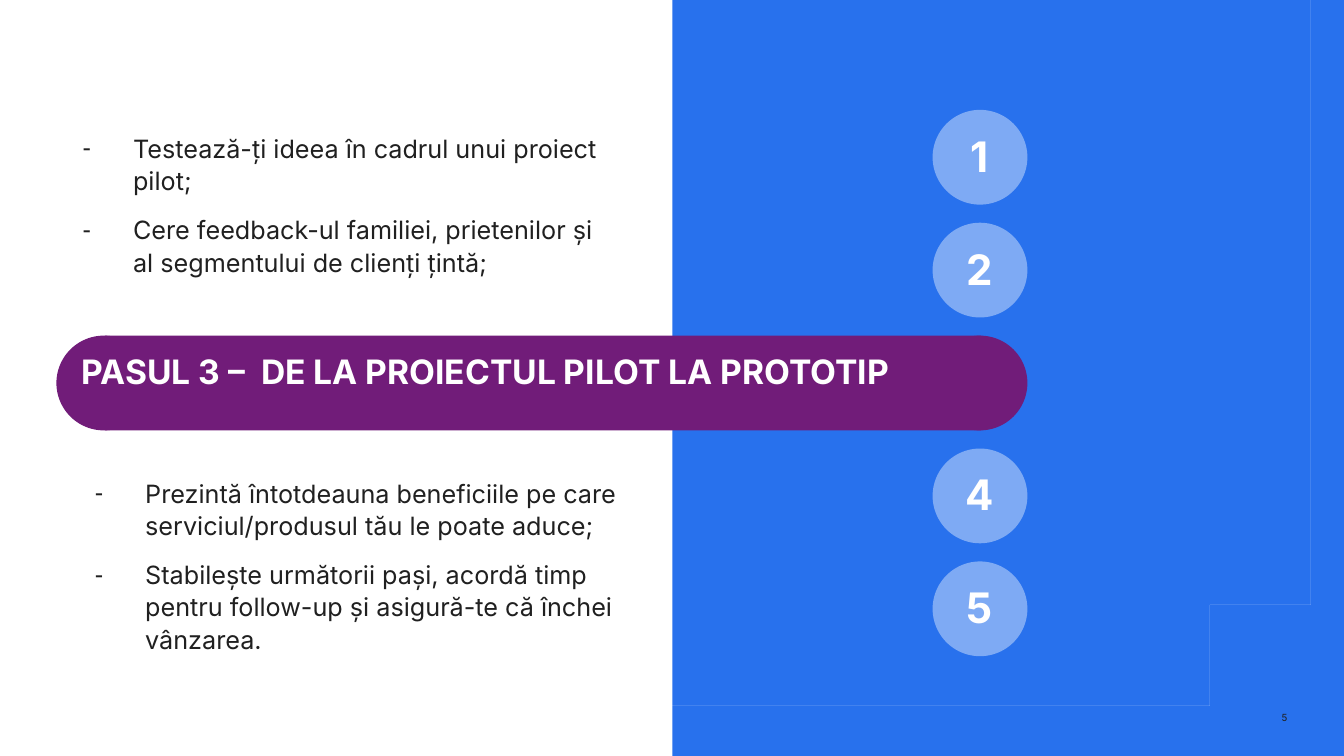
from dataclasses import dataclass
from math import cos, pi, sin

from lxml.etree import SubElement
from pptx import Presentation
from pptx.dml.color import RGBColor
from pptx.enum.shapes import MSO_SHAPE as Preset
from pptx.enum.text import MSO_ANCHOR as Anchor, MSO_AUTO_SIZE as AutoSize, PP_ALIGN as Align
from pptx.oxml.ns import qn
from pptx.util import Inches, Pt

BLUE = RGBColor(0x28, 0x71, 0xED)
PALE_BLUE = RGBColor(0x7E, 0xAA, 0xF4)
PURPLE = RGBColor(0x71, 0x1C, 0x79)
WHITE = RGBColor(0xFF, 0xFF, 0xFF)
DARK = RGBColor(0x20, 0x20, 0x20)

STEP_LEFT, STEP_TOP, STEP_PITCH, STEP_SIZE = 9.25, 1.09, 1.12, 0.94
CURRENT_STEP = 3
BEND_X, BEND_Y, BEND_RADIUS, FRAME_WIDTH = 11.44, 5.5, 1.33, 0.04


@dataclass(frozen=True)
class Box:
    left: float
    top: float
    width: float
    height: float


@dataclass(frozen=True)
class TextStyle:
    size: float
    color: RGBColor
    bold: bool = False
    align: Align = Align.LEFT
    line_spacing: float = 1.0
    space_after: float = 0
    bullet: str = ""


@dataclass(frozen=True)
class BulletList:
    placeholder: int
    box: Box
    items: tuple[str, ...]


NUMBER = TextStyle(30, WHITE, True, Align.CENTER, 0.92)
HEADING = TextStyle(24, WHITE, True, line_spacing=0.92)
BULLETS = TextStyle(18, DARK, line_spacing=1.07, space_after=12, bullet="-")
PAGE_NUMBER = TextStyle(7, DARK, align=Align.RIGHT)

LISTS = (
    BulletList(1, Box(0.82, 1.3, 5.25, 1.32), (
        "Testează-ți ideea în cadrul unui proiect pilot;",
        "Cere feedback-ul familiei, prietenilor și al segmentului de clienți țintă;",
    )),
    BulletList(2, Box(0.94, 4.72, 5.25, 2.93), (
        "Prezintă întotdeauna beneficiile pe care serviciul/produsul tău le poate aduce;",
        "Stabilește următorii pași, acordă timp pentru follow-up și asigură-te că închei vânzarea.",
    )),
)


def set_all(target, values: dict) -> None:
    for name, value in values.items():
        setattr(target, name, value)


def paint(shape, color: RGBColor) -> None:
    shape.shadow.inherit = False
    shape.fill.solid()
    shape.fill.fore_color.rgb = color
    shape.line.fill.background()


def add_preset(shapes, preset: Preset, box: Box, color: RGBColor) -> None:
    shape = shapes.add_shape(preset, Inches(box.left), Inches(box.top),
                             Inches(box.width), Inches(box.height))
    paint(shape, color)


def add_bullet(paragraph, character: str) -> None:
    properties = paragraph._p.get_or_add_pPr()
    properties.set("marL", str(Inches(0.5)))
    properties.set("indent", str(-Inches(0.5)))
    SubElement(properties, qn("a:buChar")).set("char", character)


def write_text(shape, box: Box, lines: tuple[str, ...], style: TextStyle) -> None:
    set_all(shape, {name: Inches(getattr(box, name))
                    for name in ("left", "top", "width", "height")})
    frame = shape.text_frame
    set_all(frame, {"margin_left": 0, "margin_top": 0, "margin_right": 0,
                    "margin_bottom": 0, "word_wrap": True,
                    "auto_size": AutoSize.NONE, "vertical_anchor": Anchor.TOP})
    for index, line in enumerate(lines):
        paragraph = frame.add_paragraph() if index else frame.paragraphs[0]
        if style.bullet:
            add_bullet(paragraph, style.bullet)
        set_all(paragraph, {"alignment": style.align, "line_spacing": style.line_spacing,
                            "space_before": Pt(0), "space_after": Pt(style.space_after)})
        run = paragraph.add_run()
        run.text = line
        set_all(run.font, {"name": "Inter", "size": Pt(style.size), "bold": style.bold})
        run.font.color.rgb = style.color


def add_label(slide, box: Box, text: str, style: TextStyle) -> None:
    write_text(slide.shapes.add_textbox(0, 0, 0, 0), box, (text,), style)


def bend(radius: float) -> list[tuple[float, float]]:
    angles = [pi / 2 * step / 30 for step in range(31)]
    return [(BEND_X + radius * cos(angle), BEND_Y + radius * sin(angle)) for angle in angles]


def add_frame(slide) -> None:
    inner_radius = BEND_RADIUS - FRAME_WIDTH
    outline = [
        (BEND_X + BEND_RADIUS, 0), *bend(BEND_RADIUS), (0, BEND_Y + BEND_RADIUS),
        (0, BEND_Y + inner_radius), *reversed(bend(inner_radius)), (BEND_X + inner_radius, 0),
    ]
    builder = slide.shapes.build_freeform(*outline[0], scale=Inches(1))
    builder.add_line_segments(outline[1:], close=True)
    paint(builder.convert_to_shape(), WHITE)


def add_banner(slide, top: float) -> None:
    shapes = slide.shapes.add_group_shape().shapes
    for left in (STEP_LEFT, 0.56):
        add_preset(shapes, Preset.OVAL, Box(left, top, STEP_SIZE, STEP_SIZE), PURPLE)
    add_preset(shapes, Preset.RECTANGLE, Box(1.04, top, 8.69, STEP_SIZE), PURPLE)


def add_step(slide, number: int, top: float) -> None:
    add_preset(slide.shapes, Preset.OVAL, Box(STEP_LEFT, top, STEP_SIZE, STEP_SIZE), PALE_BLUE)
    add_label(slide, Box(STEP_LEFT + 0.23, top + 0.25, 0.48, 0.43), str(number), NUMBER)


def main() -> None:
    presentation = Presentation()
    set_all(presentation, {"slide_width": Inches(13.33), "slide_height": Inches(7.5)})
    slide = presentation.slides.add_slide(presentation.slide_layouts[3])
    placeholders = {shape.placeholder_format.idx: shape for shape in slide.placeholders}

    add_preset(slide.shapes, Preset.RECTANGLE, Box(6.67, 0, 6.66, 7.5), BLUE)
    add_label(slide, Box(12.36, 7.06, 0.41, 0.14), "5", PAGE_NUMBER)
    add_frame(slide)
    for number in range(1, 6):
        top = STEP_TOP + (number - 1) * STEP_PITCH
        if number == CURRENT_STEP:
            add_banner(slide, top)
        else:
            add_step(slide, number, top)

    write_text(placeholders[0], Box(0.81, 3.52, 12.2, 0.83),
               ("PASUL 3 –  DE LA PROIECTUL PILOT LA PROTOTIP",), HEADING)
    for bullet_list in LISTS:
        write_text(placeholders[bullet_list.placeholder], bullet_list.box,
                   bullet_list.items, BULLETS)
    for placeholder in placeholders.values():
        slide.shapes.element.append(placeholder.element)

    presentation.save("out.pptx")


if __name__ == "__main__":
    main()
